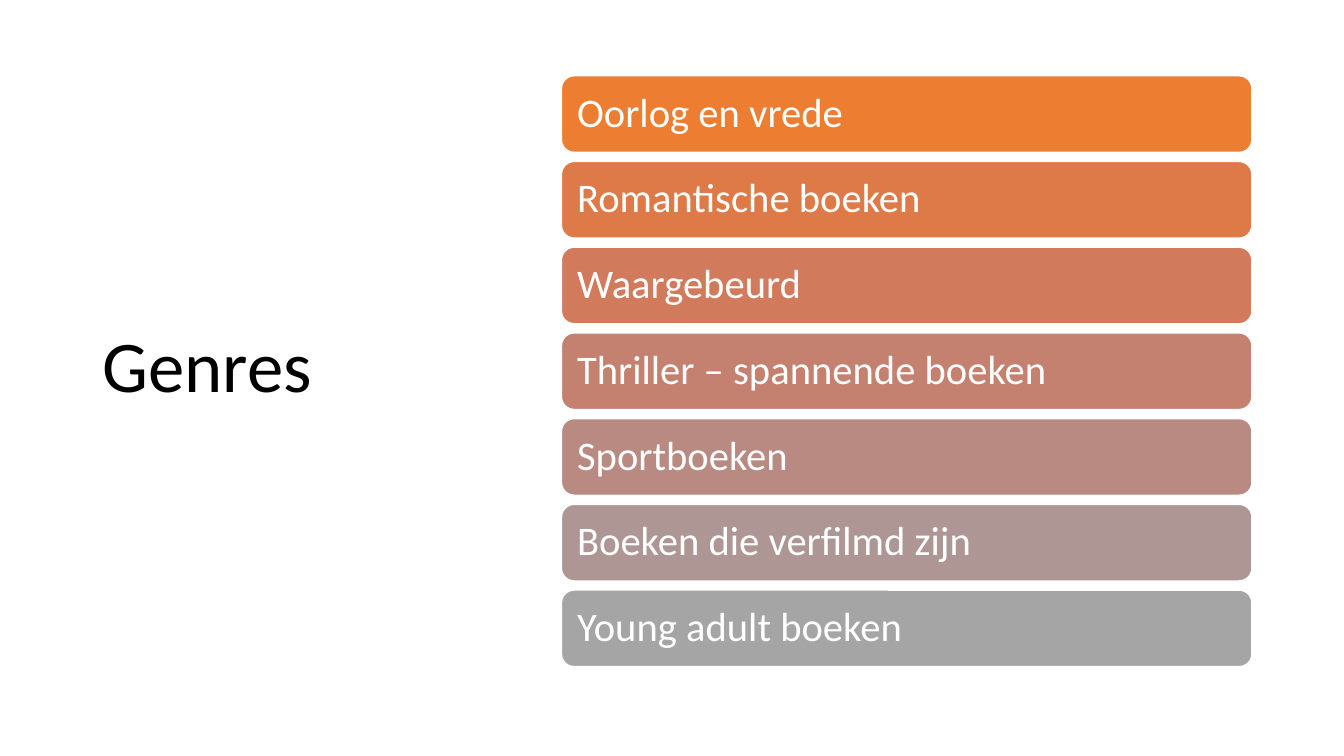
from dataclasses import dataclass

from pptx import Presentation
from pptx.dml.color import RGBColor
from pptx.enum.shapes import MSO_SHAPE
from pptx.enum.text import MSO_ANCHOR, PP_ALIGN
from pptx.util import Cm, Pt


@dataclass(frozen=True)
class Theme:
    """Colours, font and type sizes of the slide."""
    font: str = "Calibri"
    title_size: int = 52
    genre_size: int = 29
    title_color: str = "000000"
    genre_color: str = "FFFFFF"
    outline: str = "FFFFFF"
    fills: tuple = ("ED7D31", "DE7A47", "D17B5C", "C48170", "B98A82", "AE9694", "A5A5A5")


def write(frame, text, *, font, size, color, inset=None):
    """Fill a text frame with one left-aligned, vertically centred paragraph."""
    frame.word_wrap = True
    frame.vertical_anchor = MSO_ANCHOR.MIDDLE
    if inset is not None:
        frame.margin_left = frame.margin_right = inset
        frame.margin_top = frame.margin_bottom = inset
    paragraph = frame.paragraphs[0]
    paragraph.alignment = PP_ALIGN.LEFT
    paragraph.line_spacing = 0.9
    run = paragraph.add_run()
    run.text = text
    run.font.name = font
    run.font.size = Pt(size)
    run.font.color.rgb = RGBColor.from_string(color)


class GenreSlide:
    """Draws the title and the genre bars on one slide."""

    def __init__(self, slide, theme):
        """Keep the slide and its style."""
        self.slide = slide
        self.theme = theme

    def title(self, text, left, top, width, height):
        """Add the slide title."""
        heading = self.slide.shapes.add_textbox(Cm(left), Cm(top), Cm(width), Cm(height))
        write(heading.text_frame, text, font=self.theme.font,
              size=self.theme.title_size, color=self.theme.title_color)

    def genre_bar(self, text, fill, left, top, width, height):
        """Add one rounded bar that names a genre."""
        bar = self.slide.shapes.add_shape(
            MSO_SHAPE.ROUNDED_RECTANGLE, Cm(left), Cm(top), Cm(width), Cm(height))
        bar.shadow.inherit = False
        bar.fill.solid()
        bar.fill.fore_color.rgb = RGBColor.from_string(fill)
        bar.line.color.rgb = RGBColor.from_string(self.theme.outline)
        bar.line.width = Pt(1)
        write(bar.text_frame, text, font=self.theme.font, size=self.theme.genre_size,
              color=self.theme.genre_color, inset=Cm(0.3))


def main():
    """Build and save the genre slide."""
    deck = Presentation()
    deck.slide_width, deck.slide_height = Cm(33.87), Cm(19.05)
    theme = Theme()
    page = GenreSlide(deck.slides.add_slide(deck.slide_layouts[6]), theme)
    page.title("Genres", 2.34, 1.55, 9.37, 15.47)

    genres = (
        "Oorlog en vrede",
        "Romantische boeken",
        "Waargebeurd",
        "Thriller – spannende boeken",
        "Sportboeken",
        "Boeken die verfilmd zijn",
        "Young adult boeken",
    )
    first_top, pitch = 1.91, 2.16
    for row, (genre, fill) in enumerate(zip(genres, theme.fills)):
        page.genre_bar(genre, fill, 14.15, first_top + row * pitch, 17.4, 1.93)
    deck.save("out.pptx")


if __name__ == "__main__":
    main()
